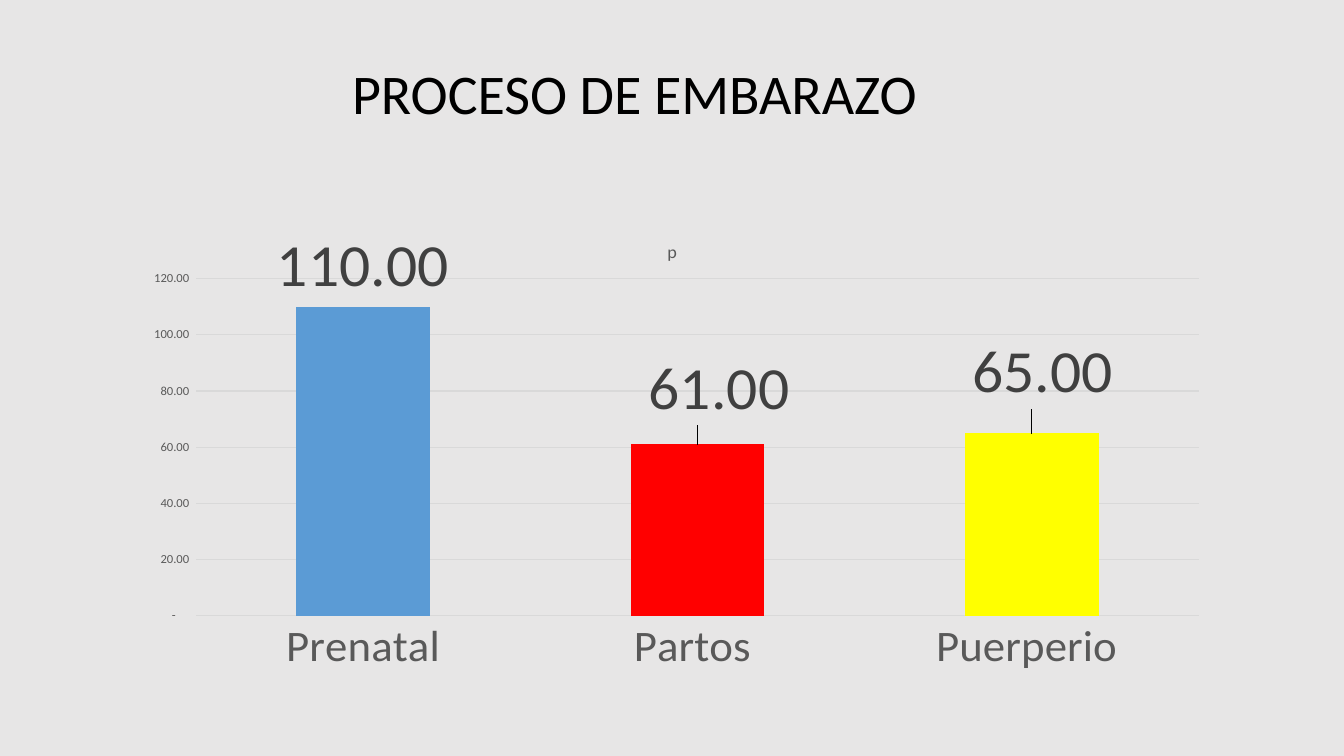
from dataclasses import dataclass

from lxml.etree import SubElement
from pptx import Presentation
from pptx.chart.data import CategoryChartData
from pptx.dml.color import RGBColor
from pptx.enum.chart import XL_CHART_TYPE, XL_LABEL_POSITION, XL_TICK_MARK
from pptx.enum.text import MSO_ANCHOR, PP_ALIGN
from pptx.oxml import parse_xml
from pptx.oxml.ns import nsdecls, qn
from pptx.util import Emu, Pt

PX = 9072
ACCOUNTING = '_(* #,##0.00_);_(* \\(#,##0.00\\);_(* "-"??_);_(@_)'


@dataclass(frozen=True)
class Theme:
    font: str = "Calibri"
    background: str = "E7E6E6"
    heading: str = "000000"
    axis: str = "595959"
    label: str = "404040"
    grid: str = "D9D9D9"
    bars: tuple = ("5B9BD5", "FF0000", "FFFF00")
    heading_size: int = 40
    chart_title_size: int = 13
    category_size: int = 32
    value_size: int = 9
    label_size: int = 44


THEME = Theme()


def color(value):
    return RGBColor.from_string(value)


def format_font(font, size, shade):
    font.name = THEME.font
    font.size = Pt(size)
    font.bold = False
    font.color.rgb = color(shade)


def write(frame, text, size, shade, align=PP_ALIGN.LEFT):
    para = frame.paragraphs[0]
    para.alignment = align
    span = para.add_run()
    span.text = text
    format_font(span.font, size, shade)


def manual_layout(**settings):
    layout = parse_xml(f"<c:layout {nsdecls('c')}/>")
    manual = SubElement(layout, qn("c:manualLayout"))
    for name, value in settings.items():
        SubElement(manual, qn(f"c:{name}")).set("val", str(value))
    return layout


def add_heading(page, left, top, width, height):
    box = page.shapes.title
    box.left, box.top, box.width, box.height = (Emu(n * PX) for n in (left, top, width, height))
    frame = box.text_frame
    frame.word_wrap = True
    frame.vertical_anchor = MSO_ANCHOR.TOP
    write(frame, "PROCESO DE EMBARAZO", THEME.heading_size, THEME.heading)


def format_axis(axis, size):
    axis.major_tick_mark = XL_TICK_MARK.NONE
    axis.minor_tick_mark = XL_TICK_MARK.NONE
    axis.format.line.fill.background()
    format_font(axis.tick_labels.font, size, THEME.axis)


def shift_label(point, x, y):
    label = point.data_label
    format_font(label.font, THEME.label_size, THEME.label)
    label.position = XL_LABEL_POSITION.OUTSIDE_END
    element = point.data_label.font._element.getparent()
    while element.tag != qn("c:dLbl"):
        element = element.getparent()
    number_format = parse_xml(f"<c:numFmt {nsdecls('c')} sourceLinked='0'/>")
    number_format.set("formatCode", ACCOUNTING)
    element.insert(1, manual_layout(x=x, y=y))
    element.insert(2, number_format)


def format_bars(plot):
    plot.gap_width = 150
    plot.vary_by_categories = False
    series = plot.series[0]
    labels = series.data_labels
    labels.show_value = True
    labels.number_format = ACCOUNTING
    labels.number_format_is_linked = False
    labels.position = XL_LABEL_POSITION.OUTSIDE_END
    format_font(labels.font, THEME.label_size, THEME.label)
    series.format.fill.solid()
    series.format.fill.fore_color.rgb = color(THEME.bars[0])
    for index, shade in enumerate(THEME.bars[1:], 1):
        fill = series.points[index].format.fill
        fill.solid()
        fill.fore_color.rgb = color(shade)
    shift_label(series.points[1], 0.02, -0.03)
    shift_label(series.points[2], 0.01, -0.04)


def add_bar_chart(page, left, top, width, height):
    data = CategoryChartData(number_format=ACCOUNTING)
    data.categories = ["Prenatal", "Partos ", "Puerperio "]
    data.add_series("Series 1", (110, 61, 65))
    box = [Emu(n * PX) for n in (left, top, width, height)]
    chart = page.shapes.add_chart(XL_CHART_TYPE.COLUMN_CLUSTERED, *box, data).chart
    format_font(chart.font, 10, THEME.heading)
    chart.has_legend = False

    chart.has_title = True
    title = chart.chart_title
    write(title.text_frame, "p", THEME.chart_title_size, THEME.axis, PP_ALIGN.CENTER)
    title.include_in_layout = False
    for old in title._element.findall(qn("c:layout")):
        title._element.remove(old)
    title._element.find(qn("c:tx")).addnext(
        manual_layout(xMode="edge", yMode="edge", x=0.49, y=0.13))

    format_axis(chart.category_axis, THEME.category_size)
    axis = chart.value_axis
    format_axis(axis, THEME.value_size)
    axis.minimum_scale, axis.maximum_scale, axis.major_unit = 0, 120, 20
    axis.tick_labels.number_format = ACCOUNTING
    axis.tick_labels.number_format_is_linked = False
    grid = axis.major_gridlines.format.line
    grid.width = Pt(0.75)
    grid.color.rgb = color(THEME.grid)
    format_bars(chart.plots[0])

    plot_area = chart._chartSpace.find(qn("c:chart")).find(qn("c:plotArea"))
    for old in plot_area.findall(qn("c:layout")):
        plot_area.remove(old)
    plot_area.insert(0, manual_layout(
        layoutTarget="inner", xMode="edge", yMode="edge",
        x=round(67 / width, 4), y=round(111 / height, 4),
        w=round(1003 / width, 4), h=round(347 / height, 4)))


def main():
    deck = Presentation()
    deck.slide_width, deck.slide_height = Emu(1344 * PX), Emu(756 * PX)
    page = deck.slides.add_slide(deck.slide_layouts[5])
    page.background.fill.solid()
    page.background.fill.fore_color.rgb = color(THEME.background)
    add_bar_chart(page, 129, 156, 1092, 521)
    add_heading(page, 342, 53, 604, 78)
    deck.save("out.pptx")


if __name__ == "__main__":
    main()
